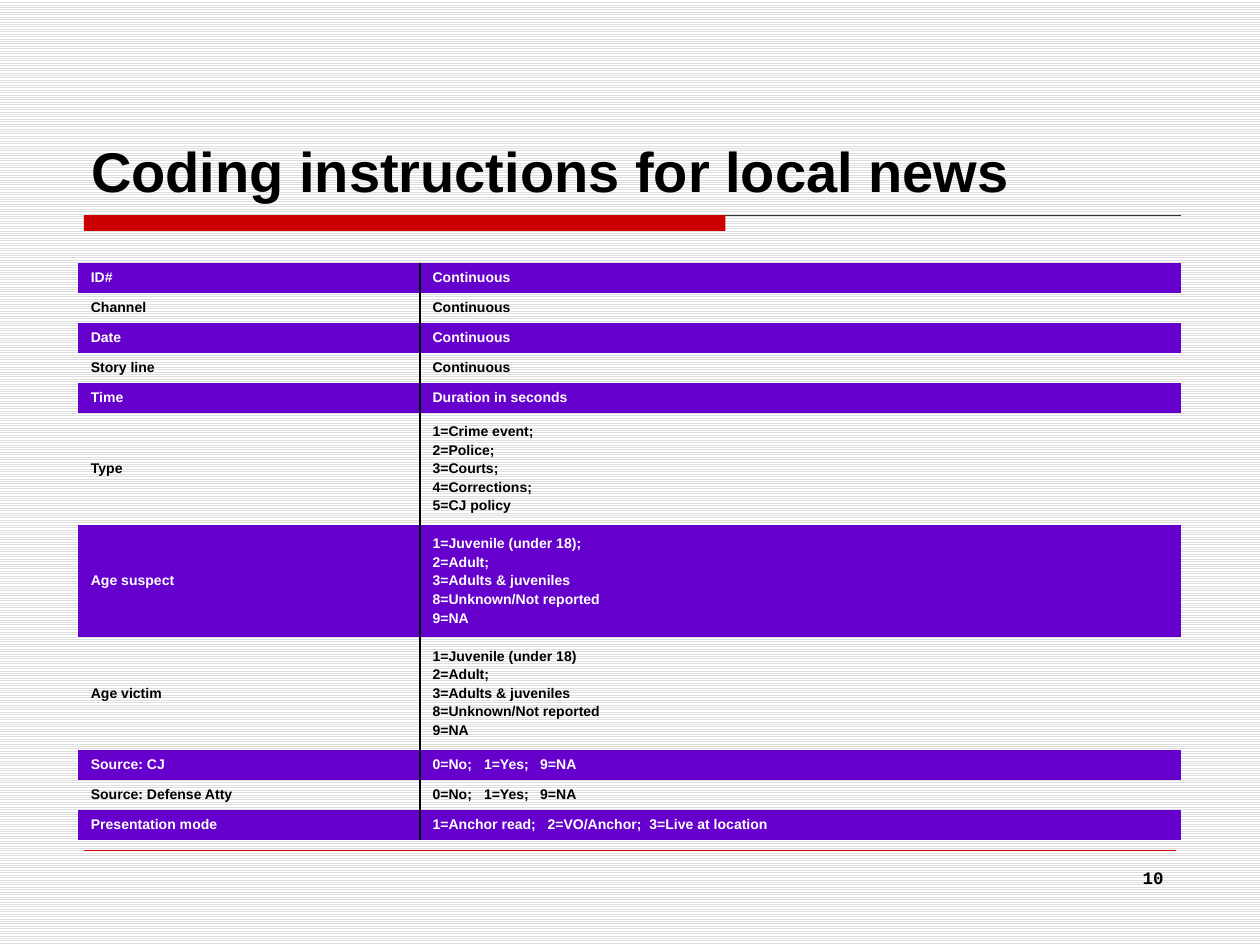
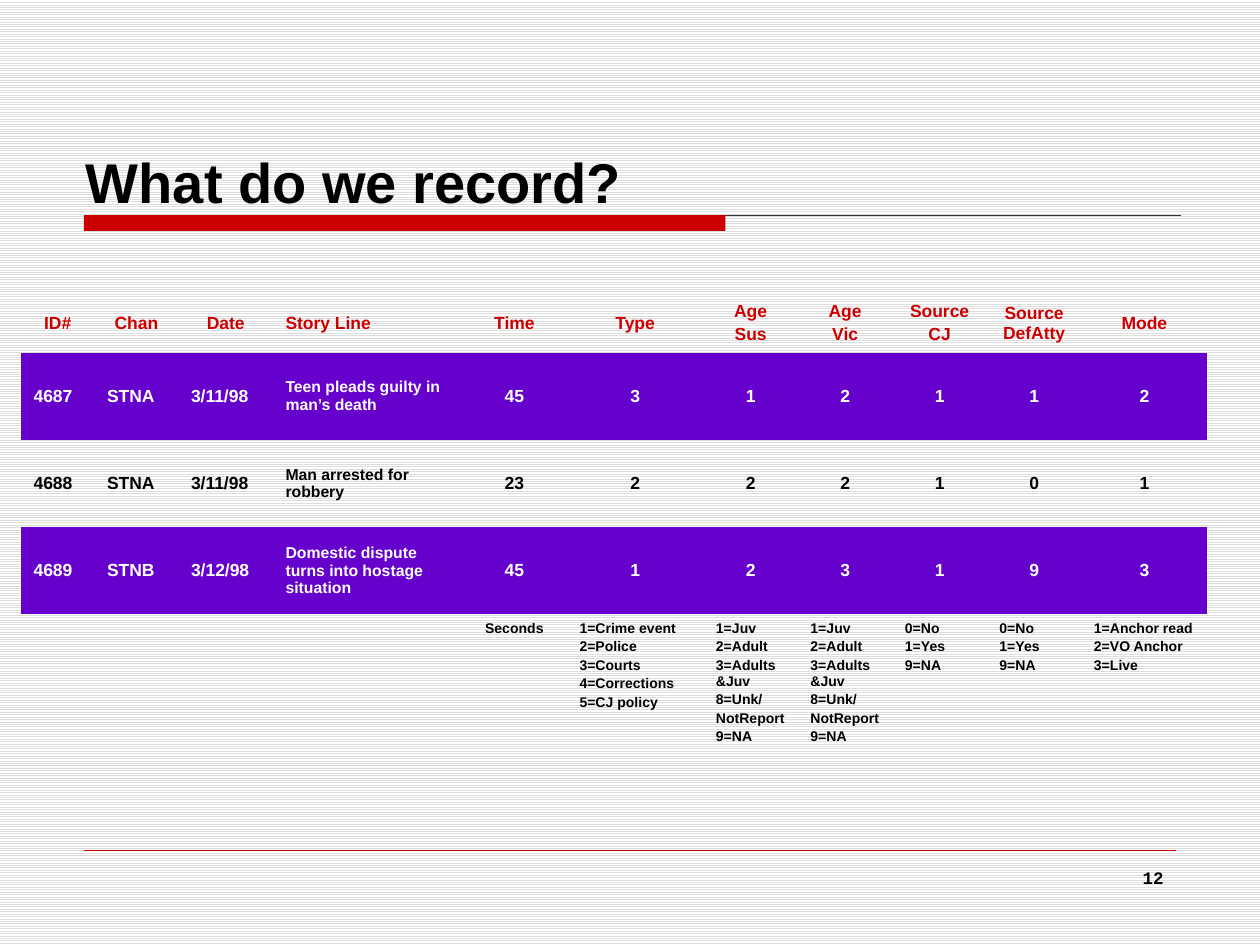
from dataclasses import dataclass, replace

from lxml import etree
from pptx import Presentation
from pptx import util as u
from pptx.dml.color import RGBColor
from pptx.enum import dml, shapes, text
from pptx.oxml import ns

# The slide is a grid of 120 columns by 90 rows of square cells.
WIDTH, HEIGHT = u.Inches(10), u.Inches(7.5)
UNIT = WIDTH / 120

COLORS = {
    "ink": "000000",
    "paper": "FFFFFF",
    "stripe": "DDDDDD",
    "red": "CC0000",
    "purple": "6600CC",
    "rule": "333333",
}
NO_STYLE = "{2D5ABB26-0587-4C30-8999-92F81FD0307C}"
LEFT, CENTER, RIGHT = text.PP_ALIGN.LEFT, text.PP_ALIGN.CENTER, text.PP_ALIGN.RIGHT
TOP, MIDDLE, BOTTOM = text.MSO_ANCHOR.TOP, text.MSO_ANCHOR.MIDDLE, text.MSO_ANCHOR.BOTTOM


@dataclass(frozen=True)
class Box:
    left: float
    top: float
    width: float
    height: float

    def emu(self) -> list[int]:
        return [grid(v) for v in (self.left, self.top, self.width, self.height)]


@dataclass(frozen=True)
class Style:
    size: float
    color: str = "ink"
    fill: str | None = None
    align: text.PP_ALIGN = LEFT
    anchor: text.MSO_ANCHOR = MIDDLE
    font: str = "Arial"
    gap: float = 0  # space before each paragraph, as a share of the size
    tabs: tuple[float, ...] = ()


@dataclass(frozen=True)
class Rule:
    left: float
    right: float
    y: float
    color: str
    weight: float


TITLE = Style(32, anchor=BOTTOM)
NUMBER = Style(10, align=RIGHT, anchor=TOP, font="Courier New")
BODY = Style(8, gap=0.2)
BAND = Box(8, 20.5, 61.1, 1.5)
NUMBER_BOX = Box(86, 82, 26, 6.25)
RULES = [Rule(8, 112.5, 20.5, "rule", 0.75), Rule(8, 112, 81, "red", 0.25)]

YES_NO = "0=No;\t1=Yes;\t9=NA"
MODES = "1=Anchor read;\t2=VO/Anchor;\t3=Live at location"
TABS = {YES_NO: (4.9, 10.25), MODES: (10.95, 20.65)}
INSTRUCTIONS = [
    ("ID#", "Continuous"),
    ("Channel", "Continuous"),
    ("Date", "Continuous"),
    ("Story line", "Continuous"),
    ("Time", "Duration in seconds"),
    ("Type", "1=Crime event;\n2=Police;\n3=Courts;\n4=Corrections;\n5=CJ policy"),
    ("Age suspect", "1=Juvenile (under 18);\n2=Adult;\n3=Adults & juveniles\n"
                    "8=Unknown/Not reported\n9=NA"),
    ("Age victim", "1=Juvenile (under 18)\n2=Adult;\n3=Adults & juveniles\n"
                   "8=Unknown/Not reported\n9=NA"),
    ("Source: CJ", YES_NO),
    ("Source: Defense Atty", YES_NO),
    ("Presentation mode", MODES),
]

HEADERS = ["ID#", "Chan", "Date", "Story Line", "Time", "Type", "Age\nSus",
           "Age\nVic", "Source\nCJ", "Source DefAtty", "Mode"]
STORIES = [
    ["4687", "STNA", "3/11/98", "Teen pleads guilty in man’s death",
     "45", "3", "1", "2", "1", "1", "2"],
    ["4688", "STNA", "3/11/98", "Man arrested for robbery",
     "23", "2", "2", "2", "1", "0", "1"],
    ["4689", "STNB", "3/12/98", "Domestic dispute turns into hostage situation",
     "45", "1", "2", "3", "1", "9", "3"],
]
AGE_CODES = "1=Juv\n2=Adult\n3=Adults&Juv\n8=Unk/\nNotReport\n9=NA"
SOURCE_CODES = "0=No\n1=Yes\n9=NA"
CODES = ["", "", "", "", "Seconds",
         "1=Crime event\n2=Police\n3=Courts\n4=Corrections\n5=CJ policy",
         AGE_CODES, AGE_CODES, SOURCE_CODES, SOURCE_CODES,
         "1=Anchor read\n2=VO Anchor\n3=Live"]
STORY_COL, TIME_COL = 3, 4


def grid(cells: float) -> int:
    return round(cells * UNIT)


def rgb(name: str) -> RGBColor:
    return RGBColor.from_string(COLORS[name])


def write(tf, content: str, style: Style) -> None:
    """Write one paragraph for each line of content."""
    for i, line in enumerate(content.split("\n")):
        p = tf.add_paragraph() if i else tf.paragraphs[0]
        p.alignment = style.align
        p.space_before = u.Pt(style.size * style.gap)
        r = p.add_run()
        r.text = line
        for name, value in {"name": style.font, "size": u.Pt(style.size), "bold": True}.items():
            setattr(r.font, name, value)
        r.font.color.rgb = rgb(style.color)
        if style.tabs:
            stops = etree.SubElement(p._p.get_or_add_pPr(), ns.qn("a:tabLst"))
            for tab in style.tabs:
                etree.SubElement(stops, ns.qn("a:tab"), pos=str(grid(tab)), algn="l")


def add_text(slide, box: Box, content: str, style: Style) -> None:
    tf = slide.shapes.add_textbox(*box.emu()).text_frame
    for name, value in {"word_wrap": True, "vertical_anchor": style.anchor}.items():
        setattr(tf, name, value)
    write(tf, content, style)


def add_rule(slide, rule: Rule) -> None:
    y = grid(rule.y)
    line = slide.shapes.add_connector(
        shapes.MSO_CONNECTOR.STRAIGHT, grid(rule.left), y, grid(rule.right), y)
    line.line.color.rgb = rgb(rule.color)
    line.line.width = u.Pt(rule.weight)
    etree.SubElement(line._element.spPr, ns.qn("a:effectLst"))


def add_slide(prs, title: str, title_box: Box, number: int):
    """Add a slide with the striped background, title, red band and footer."""
    slide = prs.slides.add_slide(prs.slide_layouts[6])
    fill = slide.background.fill
    fill.patterned()
    fill.pattern = dml.MSO_PATTERN.LIGHT_HORIZONTAL
    fill.fore_color.rgb = rgb("stripe")
    fill.back_color.rgb = rgb("paper")

    for rule in RULES:
        add_rule(slide, rule)
    band = slide.shapes.add_shape(shapes.MSO_SHAPE.RECTANGLE, *BAND.emu())
    band.shadow.inherit = False
    band.fill.solid()
    band.fill.fore_color.rgb = rgb("red")
    band.line.fill.background()
    add_text(slide, NUMBER_BOX, str(number), NUMBER)
    add_text(slide, title_box, title, TITLE)
    return slide


def add_table(slide, left: float, top: float, cols: list[float], rows: list[float]):
    box = Box(left, top, sum(cols), sum(rows))
    table = slide.shapes.add_table(len(rows), len(cols), *box.emu()).table
    for flag in ("first_row", "horz_banding"):
        setattr(table, flag, False)
    table._tbl.tblPr.find(ns.qn("a:tableStyleId")).text = NO_STYLE
    for col, width in zip(table.columns, cols):
        col.width = grid(width)
    for row, height in zip(table.rows, rows):
        row.height = grid(height)
    return table


def fill_cell(cell, content: str, style: Style) -> None:
    cell.vertical_anchor = style.anchor
    if style.fill:
        cell.fill.solid()
        cell.fill.fore_color.rgb = rgb(style.fill)
    else:
        cell.fill.background()
    if content:
        write(cell.text_frame, content, style)


def add_border(cell, side: str) -> None:
    """Draw a one-point border on side L or R of a cell."""
    ln = etree.Element(ns.qn(f"a:ln{side}"), w=str(u.Pt(1)))
    solid = etree.SubElement(ln, ns.qn("a:solidFill"))
    etree.SubElement(solid, ns.qn("a:srgbClr"), val=COLORS["ink"])
    cell._tc.get_or_add_tcPr().insert(0, ln)


def striped(style: Style, index: int) -> Style:
    """Give even rows white text on purple."""
    return style if index % 2 else replace(style, color="paper", fill="purple")


def build_instructions(prs) -> None:
    slide = add_slide(prs, "Coding instructions for local news", Box(7.5, 4, 105, 16), 10)
    heights = [10.7 if "\n" in codes else 2.86 for _, codes in INSTRUCTIONS]
    table = add_table(slide, 7.45, 25, [32.55, 72.5], heights)
    for i, row in enumerate(INSTRUCTIONS):
        for j, content in enumerate(row):
            style = replace(striped(BODY, i), tabs=TABS.get(content, ()))
            fill_cell(table.cell(i, j), content, style)
            add_border(table.cell(i, j), "RL"[j])


def build_records(prs) -> None:
    slide = add_slide(prs, "What do we record?", Box(7, 5, 105, 16), 12)
    cols = [7, 8, 9, 18, 10, 13, 9, 9, 9, 9, 12]
    table = add_table(slide, 2, 28, cols, [5.6] + [8.3] * 4)
    for j, header in enumerate(HEADERS):
        align = LEFT if j == STORY_COL else CENTER
        fill_cell(table.cell(0, j), header, replace(BODY, size=10, color="red", align=align))
        for i, story in enumerate(STORIES):
            style = replace(striped(BODY, i), size=9 if j == STORY_COL else 10,
                            align=CENTER if j >= TIME_COL else LEFT)
            fill_cell(table.cell(i + 1, j), story[j], style)
        align = CENTER if j == TIME_COL else LEFT
        fill_cell(table.cell(4, j), CODES[j], replace(BODY, align=align, anchor=TOP))


def main() -> None:
    prs = Presentation()
    prs.slide_width, prs.slide_height = WIDTH, HEIGHT
    build_instructions(prs)
    build_records(prs)
    prs.save("out.pptx")


if __name__ == "__main__":
    main()
